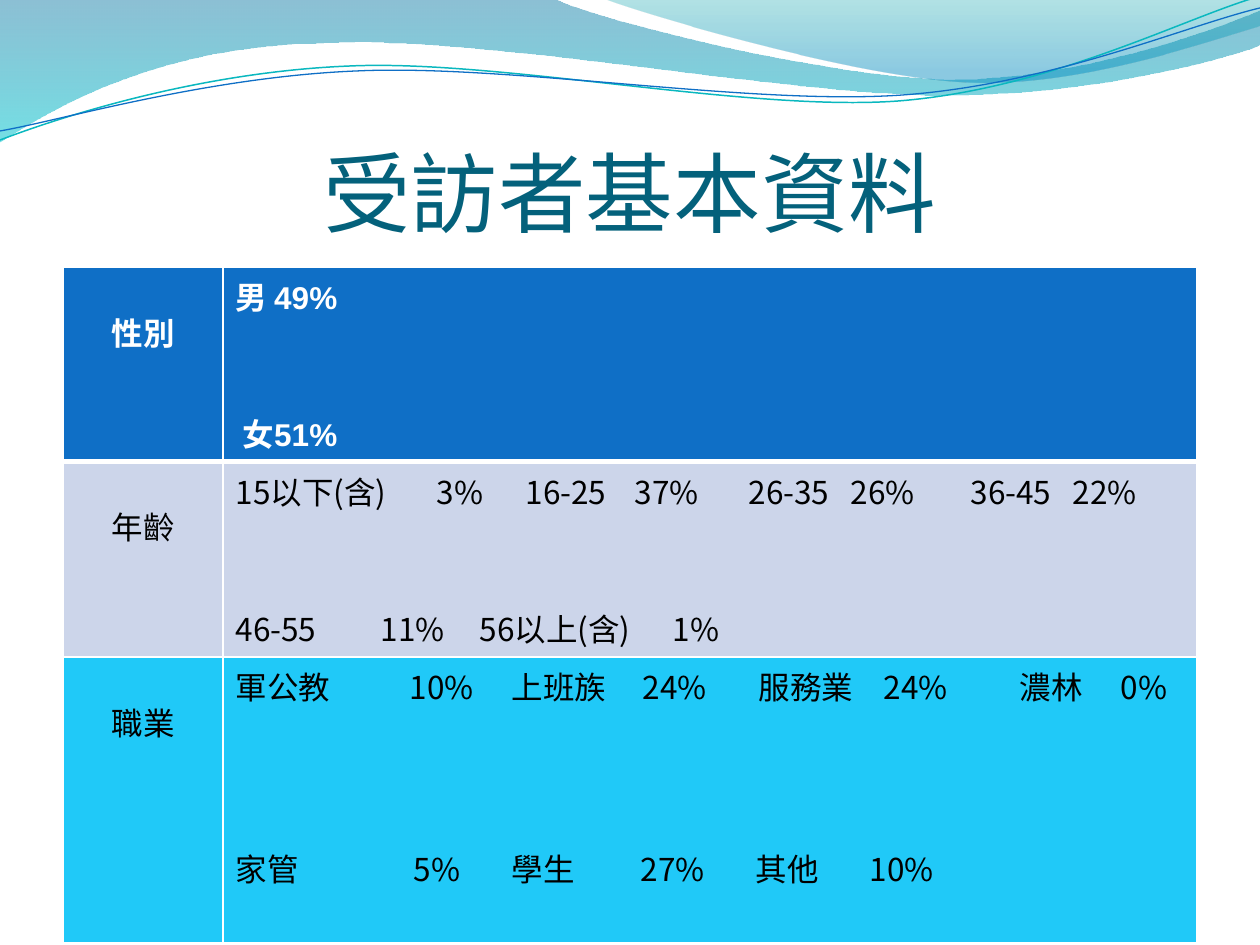
from lxml.etree import SubElement
from pptx import Presentation
from pptx.dml.color import RGBColor
from pptx.enum.text import MSO_ANCHOR, PP_ALIGN
from pptx.oxml.ns import qn
from pptx.util import Emu, Pt

WHITE = RGBColor(0xFF, 0xFF, 0xFF)
BLACK = RGBColor(0x00, 0x00, 0x00)
TITLE_TEAL = RGBColor(0x04, 0x61, 0x7B)
BLUE = RGBColor(0x0F, 0x6F, 0xC6)
PALE_BLUE = RGBColor(0xCC, 0xD5, 0xEA)
SKY = RGBColor(0x20, 0xC9, 0xF8)
TEAL = RGBColor(0x0A, 0xB8, 0xBF)
WAVE_BLUE = RGBColor(0x00, 0x74, 0xA1)
WAVE_CYAN = RGBColor(0x00, 0xC6, 0xCF)
CREST_TEAL = RGBColor(0x00, 0xA1, 0xA9)
CREST_BLUE = RGBColor(0x00, 0x8B, 0xBF)

ROW_HEIGHT = 192
LABEL_WIDTH, ANSWER_WIDTH = 160, 974
ANSWER_LEFT = 236  # page x where the answer text starts

# Each outline is a start point, then lines (x, y) and Bezier curves (six numbers)
WAVE = [(0, 0), (554, -1), (600, 21, 837, 79, 955, 79),
        (1075, 79, 1207, 33, 1260, 11), (1261, 45),
        (1239, 55, 1096, 96, 940, 95), (784, 95, 481, 35, 324, 43),
        (163, 45, 58, 105, -1, 142), (0, 0)]
CREST = [(604, -1), (641, 14, 859, 78, 969, 82),
         (1079, 87, 1211, 40, 1260, 26), (1260, 0), (604, -1)]
TEAL_RIPPLE = [(0, 140), (60, 117, 199, 72, 349, 66),
               (498, 59, 747, 112, 898, 101), (1050, 89, 1182, 19, 1257, -3)]
BLUE_RIPPLE = [(0, 131), (59, 121, 207, 77, 357, 71),
               (508, 64, 752, 106, 903, 95), (1053, 84, 1185, 26, 1260, 8)]

# Each answer line is its text and the page x of every tab stop
ROWS = [
    dict(label="性別", fill=BLUE, color=WHITE, bold=True, font="Arial",
         gap=91, bottom=6, lines=[("男 49%", []), (" 女51%", [])]),
    dict(label="年齡", fill=PALE_BLUE, color=BLACK, bold=False,
         font="Noto Sans CJK SC", gap=92, bottom=6, lines=[
             ("15以下(含)\t3%\t16-25\t37%\t26-35\t26%\t36-45\t22%",
              [437, 526, 635, 749, 851, 971, 1073]),
             ("46-55\t11%\t56以上(含)\t1%", [381, 480, 673])]),
    dict(label="職業", fill=SKY, color=BLACK, bold=False,
         font="Noto Sans CJK SC", gap=136, bottom=52, lines=[
             ("軍公教\t10%\t上班族\t24%\t服務業\t24%\t濃林\t0%",
              [410, 512, 643, 759, 884, 1020, 1121]),
             ("家管\t5%\t學生\t27%\t其他\t10%",
              [414, 512, 641, 756, 870])]),
]


def px(length):
    return Emu(round(length * 914400 / 126))


def add_outline(slide, outline):
    """Freeform through all points, whose triples then become curves."""
    points = [(px(segment[i]), px(segment[i + 1]))
              for segment in outline for i in range(0, len(segment), 2)]
    builder = slide.shapes.build_freeform(*points[0])
    builder.add_line_segments(points[1:], close=outline[0] == outline[-1])
    shape = builder.convert_to_shape()
    shape.shadow.inherit = False
    steps = iter(list(shape.element.iter(qn("a:lnTo"))))
    for segment in outline[1:]:
        step = next(steps)
        if len(segment) == 6:
            step.tag = qn("a:cubicBezTo")
            for _ in range(2):
                follower = next(steps)
                step.append(follower[0])
                follower.getparent().remove(follower)
    return shape


def add_wave(slide, outline, stops):
    """Filled wave; stops are (position, colour, opacity in percent)."""
    wave = add_outline(slide, outline)
    wave.line.fill.background()
    wave.fill.gradient()
    wave.fill.gradient_angle = 270
    for stop, (position, color, _) in zip(wave.fill.gradient_stops, stops):
        stop.position = position
        stop.color.rgb = color
    colors = wave.element.spPr.iter(qn("a:srgbClr"))
    for color, (_, _, opacity) in zip(list(colors), stops):
        SubElement(color, qn("a:alpha"), val=str(opacity * 1000))


def add_ripple(slide, outline, color, width):
    ripple = add_outline(slide, outline)
    ripple.fill.background()
    ripple.line.color.rgb = color
    ripple.line.width = Pt(width)


def add_run(paragraph, text, font, size, color, bold=False):
    run = paragraph.add_run()
    run.text = text
    run.font.name = font
    run.font.size = Pt(size)
    run.font.color.rgb = color
    run.font.bold = bold


def set_title(slide, text):
    title = slide.shapes.title
    title.left, title.top, title.width, title.height = map(px, (63, 97, 1134, 147))
    frame = title.text_frame
    frame.vertical_anchor = MSO_ANCHOR.BOTTOM
    frame.margin_left = frame.margin_right = frame.margin_bottom = 0
    frame.margin_top = px(6)
    frame.paragraphs[0].alignment = PP_ALIGN.CENTER
    add_run(frame.paragraphs[0], text, "Calibri", 50, TITLE_TEAL)


def format_cell(cell, fill, bottom_border):
    properties = cell._tc.get_or_add_tcPr()
    for side, width in (("L", 1), ("R", 1), ("T", 1), ("B", bottom_border)):
        border = SubElement(properties, qn(f"a:ln{side}"), w=str(Pt(width)))
        paint = SubElement(border, qn("a:solidFill"))
        SubElement(paint, qn("a:srgbClr"), val=str(WHITE))
    cell.fill.solid()
    cell.fill.fore_color.rgb = fill


def add_tab_stops(paragraph, stops):
    tabs = SubElement(paragraph._p.get_or_add_pPr(), qn("a:tabLst"))
    for x in stops:
        SubElement(tabs, qn("a:tab"), pos=str(px(x - ANSWER_LEFT)), algn="l")


def fill_row(label, answer, row):
    label.margin_top = px(42)
    heading = label.text_frame.paragraphs[0]
    heading.alignment = PP_ALIGN.CENTER
    add_run(heading, row["label"], "Cambria", 18, row["color"], row["bold"])

    answer.margin_bottom = px(row["bottom"])
    frame = answer.text_frame
    for index, (text, stops) in enumerate(row["lines"]):
        paragraph = frame.add_paragraph() if index else frame.paragraphs[0]
        if index:
            paragraph.space_before = px(row["gap"])
        if stops:
            add_tab_stops(paragraph, stops)
        add_run(paragraph, text, row["font"], 18, row["color"], row["bold"])


def add_profile_table(slide):
    table = slide.shapes.add_table(
        len(ROWS), 2, px(63), px(267), px(LABEL_WIDTH + ANSWER_WIDTH),
        px(ROW_HEIGHT * len(ROWS))).table
    table.columns[0].width = px(LABEL_WIDTH)
    table.columns[1].width = px(ANSWER_WIDTH)
    for index, row in enumerate(ROWS):
        table.rows[index].height = px(ROW_HEIGHT)
        label, answer = table.rows[index].cells
        for cell in (label, answer):
            format_cell(cell, row["fill"], 1 if index else 3)
        fill_row(label, answer, row)


def main():
    deck = Presentation()
    deck.slide_width, deck.slide_height = px(1260), px(945)
    slide = deck.slides.add_slide(deck.slide_layouts[5])

    # Wave decoration along the top
    add_wave(slide, WAVE, [(0, WAVE_BLUE, 45), (1, WAVE_CYAN, 55)])
    add_wave(slide, CREST, [(0, CREST_TEAL, 30), (0.8, CREST_BLUE, 45)])
    add_ripple(slide, TEAL_RIPPLE, TEAL, 0.85)
    add_ripple(slide, BLUE_RIPPLE, BLUE, 0.75)

    # Title and respondent profile
    set_title(slide, "受訪者基本資料")
    add_profile_table(slide)
    deck.save("out.pptx")


if __name__ == "__main__":
    main()
